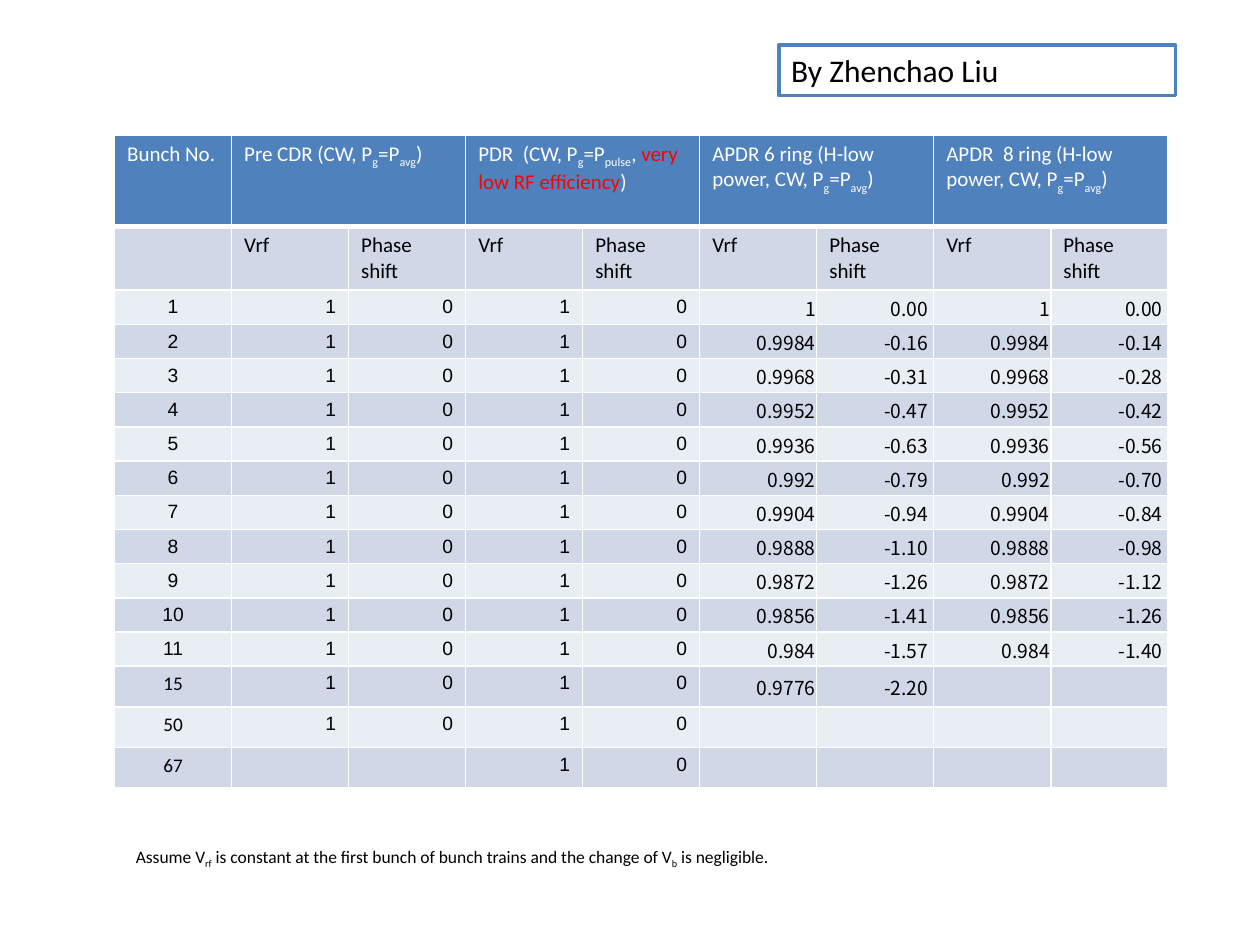
from dataclasses import dataclass
from lxml import etree
from pptx import Presentation, util as u
from pptx.dml import color
from pptx.enum import shapes, text
from pptx.oxml import ns

LEFT, CENTER, RIGHT = text.PP_ALIGN.LEFT, text.PP_ALIGN.CENTER, text.PP_ALIGN.RIGHT
BLUE, BAND, PALE = "4F81BD", "D0D8E8", "E9EDF4"
WHITE, BLACK, RED = "FFFFFF", "000000", "FF0000"
ARIAL, CALIBRI, NOTO = "Arial", "Calibri", "Noto Sans CJK SC"

AVERAGE = "P_g_=P_avg_)"
HEADERS = [
    [("Pre CDR (CW, " + AVERAGE, WHITE)],
    [("PDR  (CW, P_g_=P_pulse_, ", WHITE), ("very low RF efficiency", RED), (")", WHITE)],
    [("APDR 6 ring (H-low power, CW, " + AVERAGE, WHITE)],
    [("APDR  8 ring (H-low power, CW, " + AVERAGE, WHITE)],
]
BUNCHES = [*range(1, 12), 15, 50, 67]
VOLTAGES = ["1", "0.9984", "0.9968", "0.9952", "0.9936", "0.992", "0.9904",
            "0.9888", "0.9872", "0.9856", "0.984", "0.9776"]
SIX_RING = ["0.00", "-0.16", "-0.31", "-0.47", "-0.63", "-0.79", "-0.94",
            "-1.10", "-1.26", "-1.41", "-1.57", "-2.20"]
EIGHT_RING = ["0.00", "-0.14", "-0.28", "-0.42", "-0.56", "-0.70", "-0.84",
              "-0.98", "-1.12", "-1.26", "-1.40"]
NOTE = ("Assume V_rf_ is constant at the first bunch of bunch trains "
        "and the change of V_b_ is negligible.")


def rgb(value):
    return color.RGBColor.from_string(value)


def bunch_rows():
    count = len(BUNCHES)
    columns = [["1"] * (count - 1), ["0"] * (count - 1), ["1"] * count, ["0"] * count,
               VOLTAGES, [f"{shift} " for shift in SIX_RING],
               VOLTAGES[:len(EIGHT_RING)], [f"{shift} " for shift in EIGHT_RING]]
    for index, bunch in enumerate(BUNCHES):
        yield [str(bunch)] + [c[index] if index < len(c) else "" for c in columns]


@dataclass
class SlideBuilder:
    """Draws styled text boxes and tables on one slide."""
    page: object
    border: str = WHITE

    def add_text(self, frame, parts, size, font=CALIBRI, align=LEFT):
        para = frame.paragraphs[0]
        para.alignment = align
        para.font.size, para.font.name, para.font.bold = u.Pt(size), font, False
        for content, shade in parts:
            for index, piece in enumerate(content.split("_")):
                if piece:
                    span = para.add_run()
                    span.text = piece
                    span.font.color.rgb = rgb(shade)
                    if index % 2:
                        span.font._element.set("baseline", "-25000")
        if not para.runs:
            end = etree.SubElement(para._p, ns.qn("a:endParaRPr"))
            end.set("sz", str(size * 100))

    def label(self, left, top, width, height, content, size):
        box = self.page.shapes.add_textbox(u.Cm(left), u.Cm(top), u.Cm(width), u.Cm(height))
        box.text_frame.word_wrap = False
        self.add_text(box.text_frame, [(content, BLACK)], size)

    def frame(self, left, top, width, height, content, size):
        box = self.page.shapes.add_shape(shapes.MSO_SHAPE.RECTANGLE, u.Cm(left), u.Cm(top),
                                         u.Cm(width), u.Cm(height))
        box.shadow.inherit = False
        box.fill.solid()
        box.fill.fore_color.rgb = rgb(WHITE)
        box.line.color.rgb = rgb(BLUE)
        box.line.width = u.Pt(2)
        box.text_frame.word_wrap = True
        self.add_text(box.text_frame, [(content, BLACK)], size)

    def table(self, left, top, width, heights, columns):
        grid = self.page.shapes.add_table(len(heights), columns, u.Cm(left), u.Cm(top),
                                          u.Cm(width), u.Cm(sum(heights))).table
        grid.first_row = grid.horz_banding = False
        for row, height in zip(grid.rows, heights):
            row.height = u.Cm(height)
        return grid

    def cell(self, cell, parts, fill, size, font=CALIBRI, align=LEFT, bottom=1):
        properties = cell._tc.get_or_add_tcPr()
        for side, points in zip("LRTB", (1, 1, 1, bottom)):
            line = etree.SubElement(properties, ns.qn(f"a:ln{side}"), w=str(u.Pt(points)))
            paint = etree.SubElement(line, ns.qn("a:solidFill"))
            etree.SubElement(paint, ns.qn("a:srgbClr"), val=self.border)
        cell.fill.solid()
        cell.fill.fore_color.rgb = rgb(fill)
        if font == NOTO:
            cell.vertical_anchor = text.MSO_ANCHOR.MIDDLE
            cell.margin_left = cell.margin_right = cell.margin_top = u.Cm(0.02)
            cell.margin_bottom = 0
        self.add_text(cell.text_frame, parts, size, font, align)


def fill_table(builder):
    heights = [1.84, 1.29] + [0.69] * 11 + [0.82] * 3
    grid = builder.table(2.31, 2.72, 21.24, heights, 9)
    headers = [[("Bunch No.", WHITE)]]
    for header in HEADERS:
        headers += [header, []]
    for column, header in enumerate(headers):
        builder.cell(grid.cell(0, column), header, BLUE, 12, bottom=3)
    for column in range(1, 9, 2):
        grid.cell(0, column).merge(grid.cell(0, column + 1))
    for column, name in enumerate([""] + ["Vrf", "Phase shift"] * 4):
        builder.cell(grid.cell(1, column), [(name, BLACK)], BAND, 12)
    for row, values in enumerate(bunch_rows(), 2):
        for column, value in enumerate(values):
            font = NOTO if column > 4 and value else ARIAL
            if column == 0 and int(value) > 11:
                font = CALIBRI
            builder.cell(grid.cell(row, column), [(value, BLACK)], BAND if row % 2 else PALE,
                         11, font, RIGHT if column else CENTER)


def main():
    deck = Presentation()
    deck.slide_width, deck.slide_height = u.Cm(25.4), u.Cm(19.05)
    builder = SlideBuilder(deck.slides.add_slide(deck.slide_layouts[6]))
    fill_table(builder)
    builder.label(2.49, 16.92, 13.49, 0.69, NOTE, 10)
    builder.frame(15.7, 0.91, 8, 1.02, "By Zhenchao Liu", 18)
    deck.save("out.pptx")


if __name__ == "__main__":
    main()
